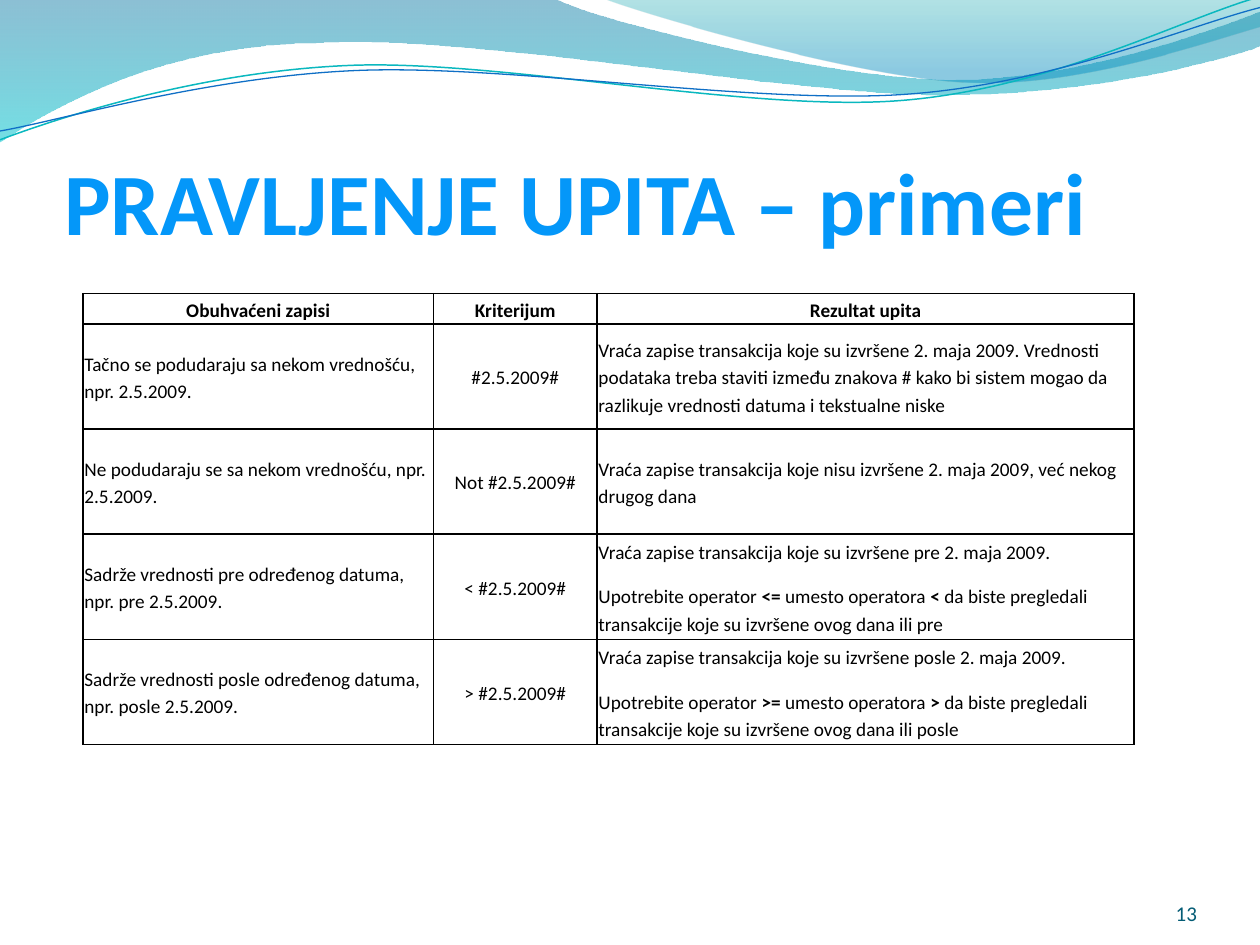
"""Builds the slide with date criteria examples for database queries."""
import pptx
import pptx.dml.color
import pptx.enum.text
import pptx.oxml
import pptx.oxml.ns
import pptx.util

Inches = pptx.util.Inches
Pt = pptx.util.Pt
RGBColor = pptx.dml.color.RGBColor
Align = pptx.enum.text.PP_ALIGN
Anchor = pptx.enum.text.MSO_ANCHOR
qn = pptx.oxml.ns.qn

BLACK = RGBColor(0x00, 0x00, 0x00)
TITLE_BLUE = RGBColor(0x04, 0x97, 0xF9)
NUMBER_BLUE = RGBColor(0x04, 0x5C, 0x75)
DEEP_BLUE = RGBColor(0x00, 0x74, 0xA1)
CYAN = RGBColor(0x00, 0xC6, 0xCF)
TEAL = RGBColor(0x00, 0xA1, 0xA9)
SKY = RGBColor(0x00, 0x8B, 0xBF)
LINE_TEAL = RGBColor(0x0A, 0xB8, 0xBF)
LINE_BLUE = RGBColor(0x0F, 0x6F, 0xC6)

LEFT_WAVE = [
    [(0, -0.01)], [(4.4, -0.01)],
    [(4.76, 0.17), (6.64, 0.63), (7.58, 0.63)],
    [(8.53, 0.63), (9.58, 0.26), (10, 0.09)], [(10.01, 0.36)],
    [(9.83, 0.44), (8.7, 0.76), (7.46, 0.75)],
    [(6.22, 0.75), (3.82, 0.28), (2.57, 0.34)],
    [(1.29, 0.35), (0.46, 0.83), (-0.01, 1.13)],
]
RIGHT_WAVE = [
    [(4.79, -0.01)],
    [(5.09, 0.11), (6.82, 0.62), (7.69, 0.65)],
    [(8.56, 0.69), (9.61, 0.32), (10, 0.21)], [(10, 0)],
]
TEAL_CURVE = [
    [(0, 1.11)],
    [(0.48, 0.93), (1.58, 0.57), (2.77, 0.52)],
    [(3.95, 0.47), (5.93, 0.89), (7.13, 0.8)],
    [(8.33, 0.71), (9.38, 0.15), (9.98, -0.02)],
]
BLUE_CURVE = [
    [(0, 1.04)],
    [(0.47, 0.96), (1.64, 0.61), (2.83, 0.56)],
    [(4.03, 0.51), (5.97, 0.83), (7.17, 0.75)],
    [(8.36, 0.67), (9.41, 0.21), (10, 0.06)],
]


def operator_result(when, operator):
    return [
        [f"Vraća zapise transakcija koje su izvršene {when} 2. maja 2009."],
        ["Upotrebite operator ", f"{operator}= ", "umesto operatora ", f"{operator} ",
         f"da biste pregledali transakcije koje su izvršene ovog dana ili {when}"],
    ]


COLUMN_WIDTHS = [2.78, 1.3, 4.26]
HEADER_HEIGHT = 0.24
ROW_HEIGHTS = [HEADER_HEIGHT] + [(3.58 - HEADER_HEIGHT) / 4] * 4
ROWS = [
    ([["Obuhvaćeni zapisi"]], [["Kriterijum"]], [["Rezultat upita"]]),
    ([["Tačno se podudaraju sa nekom vrednošću, npr. 2.5.2009."]], [["#2.5.2009#"]],
     [["Vraća zapise transakcija koje su izvršene 2. maja 2009. Vrednosti podataka treba "
       "staviti između znakova # kako bi sistem mogao da razlikuje vrednosti datuma i "
       "tekstualne niske"]]),
    ([["Ne podudaraju se sa nekom vrednošću, npr. 2.5.2009."]], [["Not #2.5.2009#"]],
     [["Vraća zapise transakcija koje nisu izvršene 2. maja 2009, već nekog drugog dana"]]),
    ([["Sadrže vrednosti pre određenog datuma, npr. pre 2.5.2009."]], [["< #2.5.2009#"]],
     operator_result("pre", "<")),
    ([["Sadrže vrednosti posle određenog datuma, npr. posle 2.5.2009."]], [["> #2.5.2009#"]],
     operator_result("posle", ">")),
]


class SlideBuilder:
    """Holds the text style and the current slide."""
    font_name = "Calibri"

    def __init__(self, slide):
        self.slide = slide

    def format_run(self, run, size, color, bold=False):
        run.font.name = self.font_name
        run.font.size = Pt(size)
        run.font.bold = bold
        run.font.color.rgb = color

    def outline(self, segments, close):
        points = [(Inches(x), Inches(y)) for segment in segments for x, y in segment]
        builder = self.slide.shapes.build_freeform(*points[0])
        builder.add_line_segments(points[1:], close=close)
        shape = builder.convert_to_shape()
        shape.shadow.inherit = False
        lines = iter(list(shape._element.iter(qn("a:lnTo"))))
        for segment in segments[1:]:
            parts = [next(lines) for _ in segment]
            if len(parts) == 3:
                bezier = parts[0].makeelement(qn("a:cubicBezTo"), {})
                parts[0].addprevious(bezier)
                for part in parts:
                    bezier.append(part[0])
                    part.getparent().remove(part)
        return shape

    def wave(self, segments, stops):
        shape = self.outline(segments, True)
        shape.line.fill.background()
        shape.fill.gradient()
        shape.fill.gradient_angle = 270
        for stop, (position, color, opacity) in zip(shape.fill.gradient_stops, stops):
            stop.position = position
            stop.color.rgb = color
        elements = shape._element.iter(qn("a:srgbClr"))
        for element, (position, color, opacity) in zip(elements, stops):
            element.append(element.makeelement(qn("a:alpha"), {"val": str(opacity * 1000)}))

    def curve(self, segments, color, width):
        shape = self.outline(segments, False)
        shape.fill.background()
        shape.line.color.rgb = color
        shape.line.width = Pt(width)

    def text(self, text, box, size, color, bold=False, alignment=Align.LEFT, top_inset=0):
        shape = self.slide.shapes.add_textbox(*[Inches(value) for value in box])
        frame = shape.text_frame
        frame.word_wrap = True
        frame.vertical_anchor = Anchor.BOTTOM
        frame.margin_left = frame.margin_right = frame.margin_bottom = 0
        frame.margin_top = Inches(top_inset)
        frame.text = text
        frame.paragraphs[0].alignment = alignment
        self.format_run(frame.paragraphs[0].runs[0], size, color, bold)

    def border(self, cell):
        properties = cell._tc.get_or_add_tcPr()
        for index, side in enumerate("LRTB"):
            properties.insert(index, pptx.oxml.parse_xml(
                f'<a:ln{side} {pptx.oxml.ns.nsdecls("a")} w="{Pt(1)}">'
                f'<a:solidFill><a:srgbClr val="{BLACK}"/></a:solidFill></a:ln{side}>'))

    def cell(self, cell, paragraphs, centered, header):
        cell.margin_left = cell.margin_right = Inches(0.01)
        cell.margin_top = cell.margin_bottom = Inches(0.01)
        cell.vertical_anchor = Anchor.MIDDLE
        cell.fill.background()
        self.border(cell)
        frame = cell.text_frame
        for number, parts in enumerate(paragraphs):
            paragraph = frame.add_paragraph() if number else frame.paragraphs[0]
            paragraph.alignment = Align.CENTER if centered else Align.LEFT
            paragraph.line_spacing = 1.15
            paragraph.space_after = Pt(0 if number else 10)
            for index, part in enumerate(parts):
                run = paragraph.add_run()
                run.text = part
                self.format_run(run, 11, BLACK, header or index % 2 == 1)

    def table(self, left, top, widths, heights, rows):
        table = self.slide.shapes.add_table(
            len(rows), len(widths), Inches(left), Inches(top),
            Inches(sum(widths)), Inches(sum(heights))).table
        table.first_row = table.horz_banding = False
        for column, width in zip(table.columns, widths):
            column.width = Inches(width)
        for row, height in zip(table.rows, heights):
            row.height = Inches(height)
        for r, row in enumerate(rows):
            for c, paragraphs in enumerate(row):
                self.cell(table.cell(r, c), paragraphs, r == 0 or c == 1, r == 0)


def main():
    presentation = pptx.Presentation()
    presentation.slide_width = Inches(10)
    presentation.slide_height = Inches(7.5)
    builder = SlideBuilder(presentation.slides.add_slide(presentation.slide_layouts[6]))
    builder.wave(LEFT_WAVE, [(0, DEEP_BLUE, 45), (1, CYAN, 55)])
    builder.wave(RIGHT_WAVE, [(0, TEAL, 30), (0.8, SKY, 45)])
    builder.curve(TEAL_CURVE, LINE_TEAL, 0.85)
    builder.curve(BLUE_CURVE, LINE_BLUE, 0.75)
    builder.text("PRAVLJENJE UPITA – primeri", (0.51, 0.76, 9, 1.25), 50, TITLE_BLUE,
                 bold=True, top_inset=0.05)
    builder.text("13", (8.67, 6.95, 0.83, 0.4), 12, NUMBER_BLUE, alignment=Align.RIGHT)
    builder.table(0.66, 2.33, COLUMN_WIDTHS, ROW_HEIGHTS, ROWS)
    presentation.save("out.pptx")


if __name__ == "__main__":
    main()
